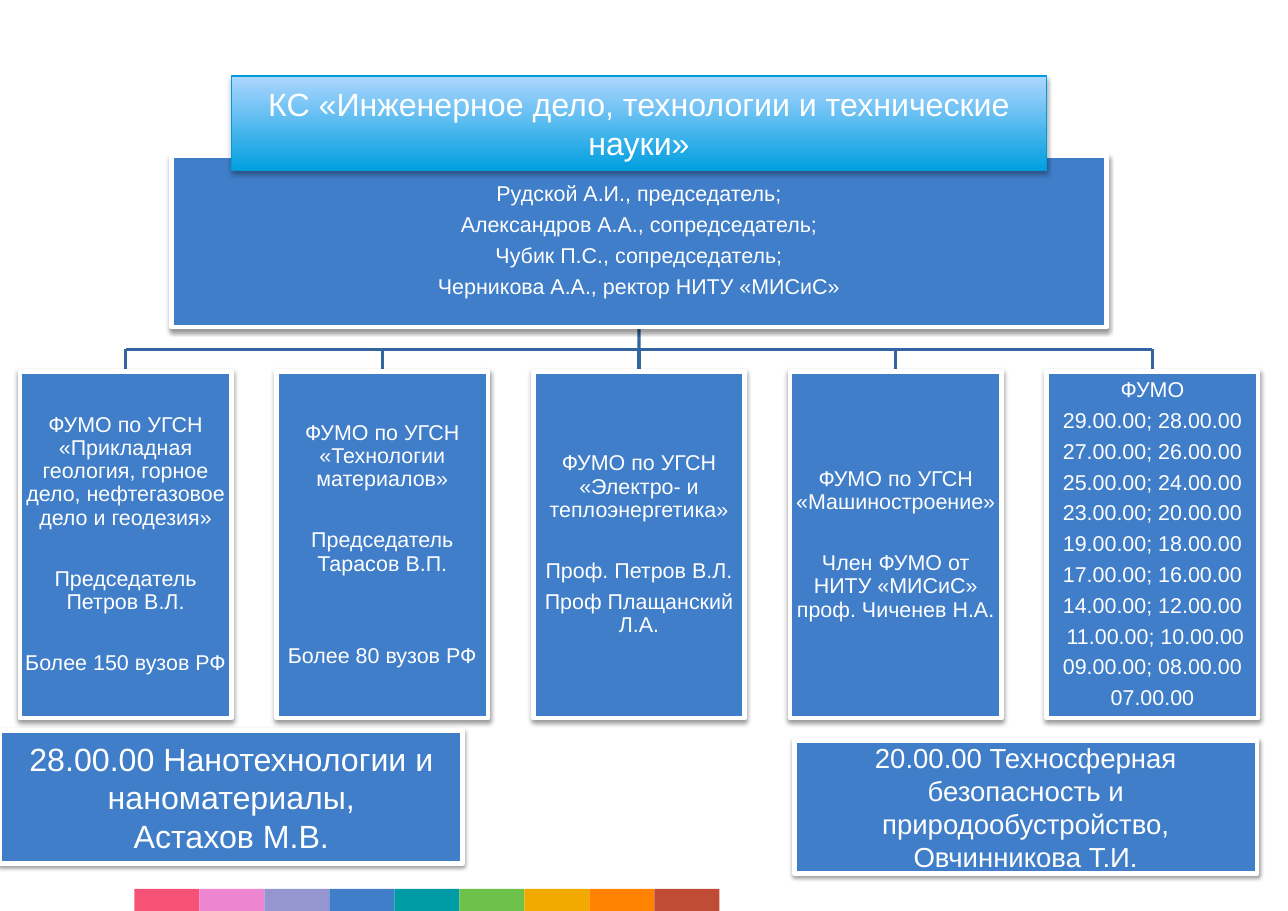
from lxml import etree
from pptx import Presentation
from pptx.dml.color import RGBColor
from pptx.enum.shapes import MSO_CONNECTOR, MSO_SHAPE
from pptx.enum.text import MSO_ANCHOR, PP_ALIGN
from pptx.oxml import parse_xml
from pptx.oxml.ns import nsdecls, qn
from pptx.util import Inches, Pt

RECT = MSO_SHAPE.RECTANGLE
STRAIGHT = MSO_CONNECTOR.STRAIGHT
CENTER, MIDDLE = PP_ALIGN.CENTER, MSO_ANCHOR.MIDDLE

# Content: a number in a list is the count of free lines before the next text
TITLE = ["КС «Инженерное дело, технологии и технические науки»"]
HEADS = [
    "Рудской А.И., председатель;",
    "Александров А.А., сопредседатель;",
    "Чубик П.С., сопредседатель;",
    "Черникова А.А., ректор НИТУ «МИСиС»",
]
CARDS = [
    ["ФУМО по УГСН «Прикладная геология, горное дело, нефтегазовое дело и геодезия»",
     1, "Председатель Петров В.Л.", 1, "Более 150 вузов РФ"],
    ["ФУМО по УГСН «Технологии материалов»",
     1, "Председатель Тарасов В.П.", 2, "Более 80 вузов РФ"],
    ["ФУМО по УГСН «Электро- и теплоэнергетика»",
     1, "Проф. Петров В.Л.", "Проф Плащанский Л.А."],
    ["ФУМО по УГСН «Машиностроение»",
     1, "Член ФУМО от НИТУ «МИСиС» проф. Чиченев Н.А."],
    ["ФУМО", "29.00.00; 28.00.00", "27.00.00; 26.00.00", "25.00.00; 24.00.00",
     "23.00.00; 20.00.00", "19.00.00; 18.00.00", "17.00.00; 16.00.00",
     "14.00.00; 12.00.00", " 11.00.00; 10.00.00", "09.00.00; 08.00.00", "07.00.00"],
]
NOTES = [
    (0, 6.63, 21, ["28.00.00 Нанотехнологии и наноматериалы,", "Астахов М.В."]),
    (7.21, 6.72, 18,
     ["20.00.00 Техносферная безопасность и природообустройство, Овчинникова Т.И."]),
]
STRIPE = ["F65275", "EC86D0", "9595D2", "407EC9", "009CA6",
          "6CC24A", "F2A900", "FF8200", "C04C36"]
FONT, BLUE, WHITE, WIRE = "Arial", "407EC9", "FFFFFF", "3365A1"

# Grid, in inches
WIDE, HIGH = 11.69, 8.27
MID, STEP = 5.8, 2.33
HUB_W, HUB_TOP, HUB_H = 8.49, 1.41, 1.56
CARD_W, CARD_TOP, CARD_H = 1.92, 3.37, 3.15
NOTE_W, NOTE_H = 4.2, 1.21
TILE_X, TILE_W, TILE_H = 1.22, 0.59, 0.2
HUB_END = HUB_TOP + HUB_H
BUS = (HUB_END + CARD_TOP) / 2
GAP, ROW = 5, 20  # points: after a paragraph, and for one free line

deck = Presentation()
deck.slide_width, deck.slide_height = Inches(WIDE), Inches(HIGH)
slide = deck.slides.add_slide(deck.slide_layouts[6])
shapes = slide.shapes


def tint(code):
    return RGBColor.from_string(code)


def rect(x, y, w, h, fill):
    box = shapes.add_shape(RECT, *map(Inches, (x, y, w, h)))
    box.shadow.inherit = False
    box.fill.solid()
    box.fill.fore_color.rgb = tint(fill)
    box.line.fill.background()
    return box


def panel(x, y, w, h, edge=WHITE, width=3, dark=38):
    box = rect(x, y, w, h, BLUE)
    box.line.color.rgb = tint(edge)
    box.line.width = Pt(width)
    glow = box._element.spPr.find(qn("a:effectLst"))
    glow.append(parse_xml(
        f'<a:outerShdw {nsdecls("a")} blurRad="{Pt(3.1)}" dist="{Pt(1.6)}" '
        f'dir="5400000" rotWithShape="0"><a:srgbClr val="000000">'
        f'<a:alpha val="{dark * 1000}"/></a:srgbClr></a:outerShdw>'))
    return box


def write(box, items, size, tight=False):
    frame = box.text_frame
    frame.word_wrap = True
    frame.vertical_anchor = MIDDLE
    side, top = (0.01, 0.01) if tight else (0.11, 0.06)
    frame.margin_left = frame.margin_right = Inches(side)
    frame.margin_top = frame.margin_bottom = Inches(top)
    para, free = None, 0
    for item in items:
        if isinstance(item, int):
            free = item
            continue
        para = frame.add_paragraph() if para else frame.paragraphs[0]
        para.text = item
        para.alignment = CENTER
        para.font.name, para.font.size = FONT, Pt(size)
        para.font.color.rgb = tint(WHITE)
        if tight:
            para.line_spacing = 0.9
            para.space_before, para.space_after = Pt(free * ROW), Pt(GAP)
        free = 0


def wire(x1, y1, x2, y2):
    link = shapes.add_connector(STRAIGHT, *map(Inches, (x1, y1, x2, y2)))
    link.line.color.rgb = tint(WIRE)
    link.line.width = Pt(2)
    etree.SubElement(link._element.spPr, qn("a:effectLst"))
    return link


# Colour stripe at the foot
for i, code in enumerate(STRIPE):
    rect(TILE_X + i * TILE_W, HIGH - TILE_H, TILE_W, TILE_H, code)

# Tree lines: trunk, bus and one drop per card
mids = [MID + (i - len(CARDS) // 2) * STEP for i in range(len(CARDS))]
trunk = wire(MID, HUB_END, MID, BUS)
wire(mids[0], BUS, mids[-1], BUS)
drops = [wire(x, BUS, x, CARD_TOP) for x in mids]

# Council heads
hub = panel(MID - HUB_W / 2, HUB_TOP, HUB_W, HUB_H)
write(hub, HEADS, 14, tight=True)
trunk.begin_connect(hub, 2)

# Cards
for x, drop, items in zip(mids, drops, CARDS):
    card = panel(x - CARD_W / 2, CARD_TOP, CARD_W, CARD_H)
    write(card, items, 14, tight=True)
    drop.end_connect(card, 0)

# Title bar, light at the top
bar = panel(2.1, 0.69, 7.4, 0.86, "009BDA", 0.75, 35)
bar.fill.gradient()
bar.fill.gradient_angle = 90
for stop, code in zip(bar.fill.gradient_stops, ("009FDF", "ADD6FF")):
    stop.color.rgb = tint(code)
write(bar, TITLE, 21)

# Notes below the cards
for x, y, size, items in NOTES:
    write(panel(x, y, NOTE_W, NOTE_H), items, size)

deck.save("out.pptx")
